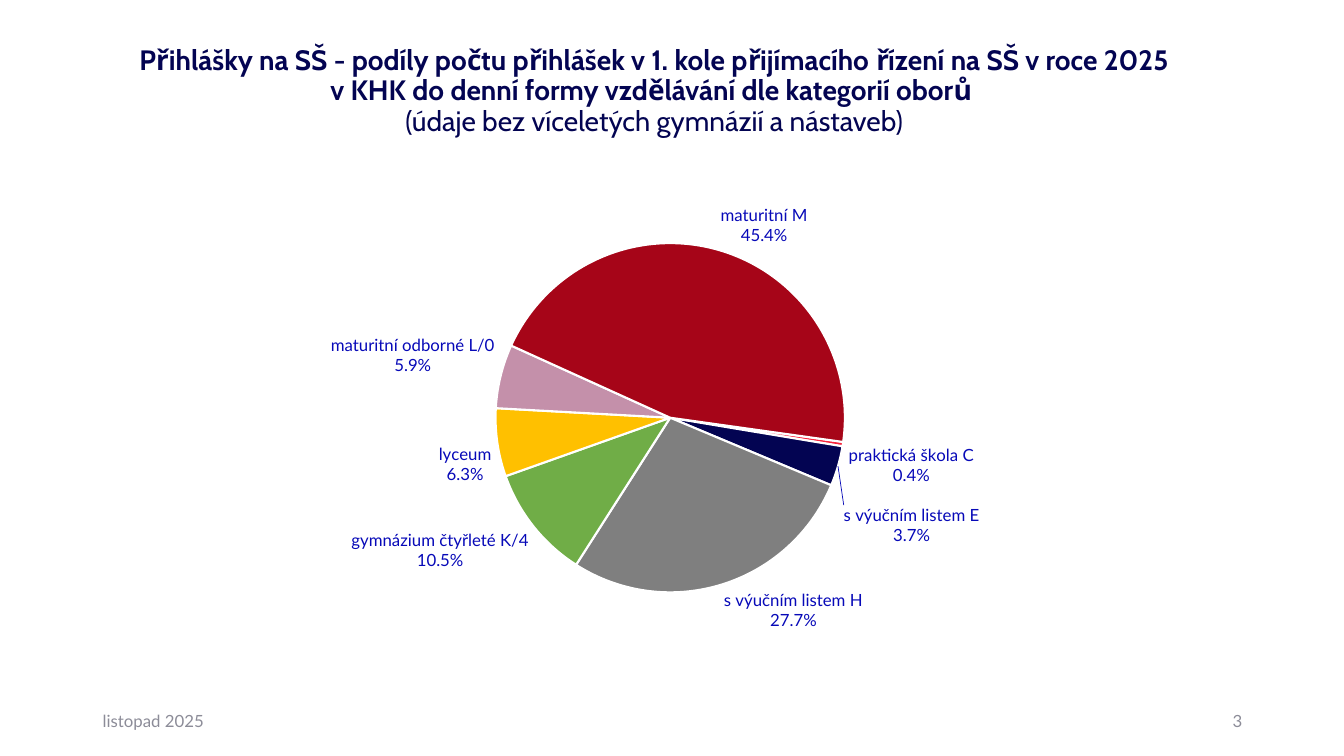
import copy

import pptx
import pptx.chart.data
import pptx.dml.color
import pptx.enum.chart
import pptx.enum.text
import pptx.oxml
import pptx.oxml.ns
import pptx.util

PX = 9144
NAVY, BLUE, GREY, WHITE = "030452", "0709B8", "8C8C98", "FFFFFF"
ALIGN = pptx.enum.text.PP_ALIGN
ANCHOR = pptx.enum.text.MSO_ANCHOR

SHARES = [
    ("praktická škola C", 0.4, "F8263E"),
    ("s výučním listem E", 3.7, NAVY),
    ("s výučním listem H", 27.7, "7F7F7F"),
    ("gymnázium čtyřleté K/4", 10.5, "70AD47"),
    ("lyceum", 6.3, "FFC000"),
    ("maturitní odborné L/0", 5.9, "C490AA"),
    ("maturitní M", 45.4, "A60518"),
]


def color(value):
    return pptx.dml.color.RGBColor.from_string(value)


def chart_xml(tag, content="", attributes=""):
    namespaces = pptx.oxml.ns.nsdecls("c", "a")
    return pptx.oxml.parse_xml(f"<c:{tag} {namespaces} {attributes}>{content}</c:{tag}>")


def manual_layout(**settings):
    content = "".join(f'<c:{name} val="{value}"/>' for name, value in settings.items())
    return chart_xml("layout", f"<c:manualLayout>{content}</c:manualLayout>")


class SlideBuilder:
    """Draws styled text and pie charts on one slide."""

    def __init__(self, presentation):
        self.slide = presentation.slides.add_slide(presentation.slide_layouts[6])

    def style(self, font, name, size, value, bold=False):
        font.name, font.size, font.bold = name, pptx.util.Pt(size), bold
        font.color.rgb = color(value)

    def text(self, box, lines, name, size, value, align, anchor=ANCHOR.MIDDLE, spacing=1.0):
        shape = self.slide.shapes.add_textbox(*(length * PX for length in box))
        frame = shape.text_frame
        frame.word_wrap = True
        frame.vertical_anchor = anchor
        frame.margin_top = frame.margin_bottom = 0
        for index, (line, bold) in enumerate(lines):
            paragraph = frame.add_paragraph() if index else frame.paragraphs[0]
            paragraph.text = line
            paragraph.alignment = align
            paragraph.line_spacing = spacing
            self.style(paragraph.font, name, size, value, bold)

    def pie(self, box, shares, start):
        data = pptx.chart.data.CategoryChartData()
        data.categories = [category for category, _, _ in shares]
        data.add_series("Series 1", [share for _, share, _ in shares])
        chart = self.slide.shapes.add_chart(
            pptx.enum.chart.XL_CHART_TYPE.PIE, *(length * PX for length in box), data
        ).chart
        chart.has_title = chart.has_legend = False
        self.style(chart.font, "Lato", 10, NAVY)
        plot = chart.plots[0]
        plot.vary_by_categories = True
        for index, (_, _, fill) in enumerate(shares):
            slice_format = plot.series[0].points[index].format
            slice_format.fill.solid()
            slice_format.fill.fore_color.rgb = color(fill)
            slice_format.line.color.rgb = color(WHITE)
            slice_format.line.width = pptx.util.Pt(1.5)

        pie_element = chart.element.xpath(".//c:pieChart")[0]
        pie_element.append(chart_xml("firstSliceAng", attributes=f'val="{start}"'))
        plot_area = pie_element.getparent()
        for layout in plot_area.xpath("./c:layout"):
            plot_area.remove(layout)
        plot_area.insert(0, manual_layout(
            layoutTarget="inner", xMode="edge", yMode="edge", x=0.35, y=0.12, w=0.33, h=0.76
        ))
        return chart

    def pie_labels(self, chart, moved, x, y):
        labels = chart.plots[0].series[0].data_labels
        labels.show_value = False
        labels.show_category_name = labels.show_percentage = True
        labels.number_format, labels.number_format_is_linked = "0.0%", False
        labels.position = pptx.enum.chart.XL_LABEL_POSITION.OUTSIDE_END
        self.style(labels.font, "Lato", 12, BLUE)

        group = chart.element.xpath(".//c:ser/c:dLbls")[0]
        for leader in group.xpath("./c:showLeaderLines"):
            group.remove(leader)
        group.append(chart_xml("separator", "\n"))
        label = chart_xml("dLbl", f'<c:idx val="{moved}"/>')
        label.append(manual_layout(x=x, y=y))
        label.extend([copy.deepcopy(setting) for setting in group])
        group.insert(0, label)
        group.append(chart_xml("showLeaderLines", attributes='val="1"'))
        group.append(chart_xml(
            "leaderLines",
            f'<c:spPr><a:ln w="6350"><a:solidFill><a:srgbClr val="{BLUE}"/>'
            "</a:solidFill></a:ln></c:spPr>",
        ))


def main():
    presentation = pptx.Presentation()
    presentation.slide_width, presentation.slide_height = 1333 * PX, 750 * PX
    builder = SlideBuilder(presentation)
    title = [
        ("Přihlášky na SŠ - podíly počtu přihlášek v 1. kole přijímacího řízení na SŠ "
         "v roce 2025 v KHK do denní formy vzdělávání dle kategorií oborů ", True),
        ("(údaje bez víceletých gymnázií a nástaveb)", False),
    ]
    builder.text((124, 46, 1050, 110), title, "Cabin", 20, NAVY, ALIGN.CENTER, ANCHOR.TOP, 0.9)
    chart = builder.pie((124, 183, 1050, 463), SHARES, start=98)
    builder.pie_labels(chart, moved=1, x=0, y=0.08)
    for left, words, align in ((92, "listopad 2025", ALIGN.LEFT), (942, "3", ALIGN.RIGHT)):
        builder.text((left, 695, 300, 40), [(words, False)], "Lato", 12, GREY, align)
    presentation.save("out.pptx")


if __name__ == "__main__":
    main()
